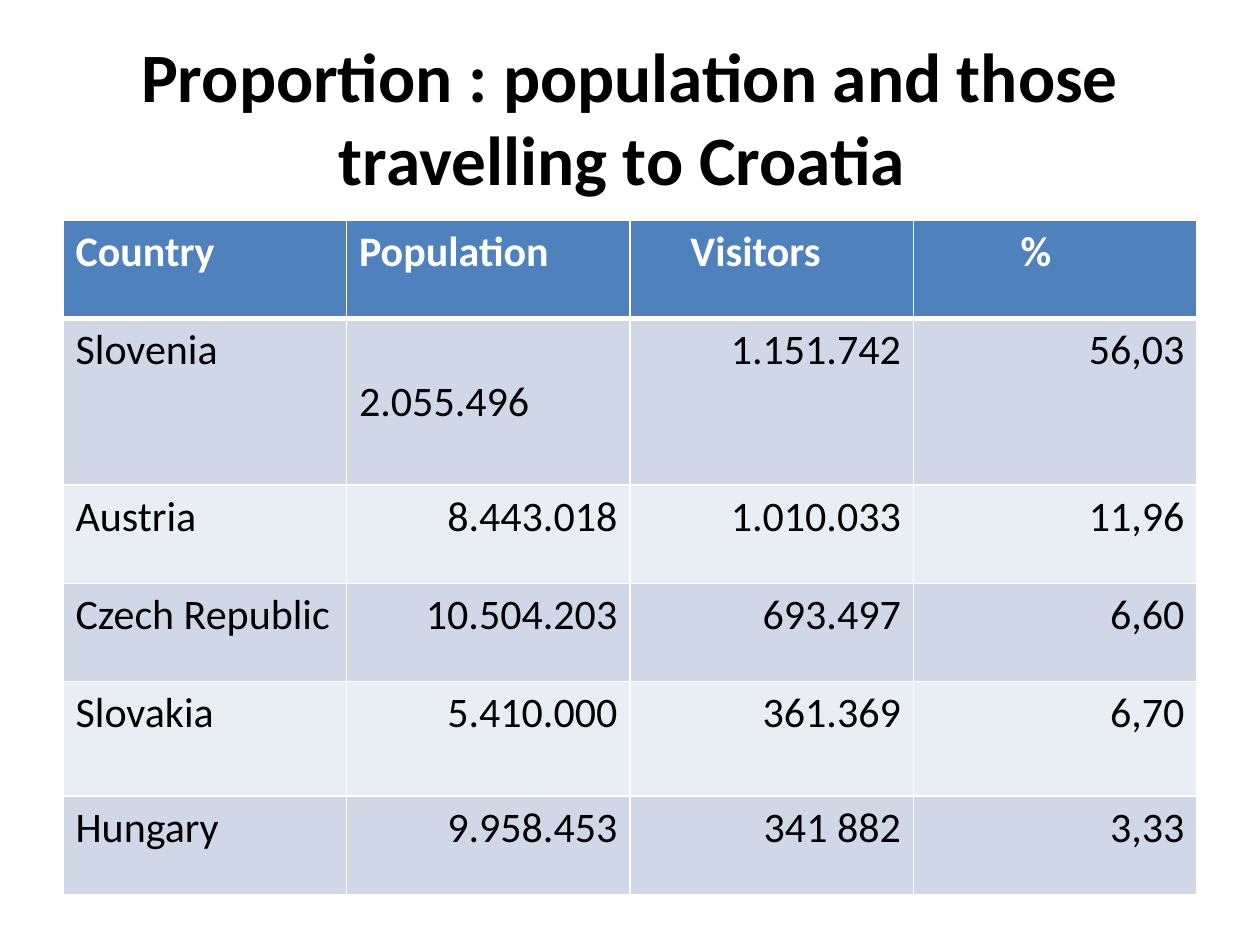
"""Build a slide comparing populations with visitors to Croatia."""
from lxml import etree
from pptx import Presentation
from pptx.dml.color import RGBColor
from pptx.enum.text import MSO_ANCHOR, MSO_AUTO_SIZE, PP_ALIGN
from pptx.oxml.ns import qn
from pptx.util import Inches, Pt

LEFT, CENTER, RIGHT = PP_ALIGN.LEFT, PP_ALIGN.CENTER, PP_ALIGN.RIGHT
MIDDLE = MSO_ANCHOR.MIDDLE
NO_FIT = MSO_AUTO_SIZE.NONE
WHITE = RGBColor(0xFF, 0xFF, 0xFF)
BLACK = RGBColor(0x00, 0x00, 0x00)
HEADER_BLUE = RGBColor(0x4F, 0x81, 0xBD)
BANDS = (RGBColor(0xE9, 0xED, 0xF4), RGBColor(0xD0, 0xD8, 0xE8))
FONT = "Calibri"

TITLE = "Proportion : population and those travelling to Croatia "
ROWS = [
    ("Country", "Population", "Visitors", "%"),
    ("Slovenia", "2.055.496", "1.151.742", "56,03"),
    ("Austria", "8.443.018", "1.010.033", "11,96"),
    ("Czech Republic", "10.504.203", "693.497", "6,60"),
    ("Slovakia", "5.410.000", "361.369", "6,70"),
    ("Hungary", "9.958.453", "341 882", "3,33"),
]
ROW_HEIGHTS = (0.78, 1.32, 0.78, 0.78, 0.91, 0.78)
COL_WIDTH = 2.25
HEADER_INDENTS = (0.1, 0.1, 0.48, 0.85)
LOWERED_CELL = (1, 1)


def add_text(tf, text, size, color, bold, align):
    p = tf.paragraphs[0]
    p.alignment = align
    r = p.add_run()
    r.text = text
    r.font.name = FONT
    r.font.size = Pt(size)
    r.font.bold = bold
    r.font.color.rgb = color


def set_borders(cell, widths):
    tc_pr = cell._tc.get_or_add_tcPr()
    for i, (side, width) in enumerate(widths.items()):
        ln = etree.Element(qn(f"a:ln{side}"), w=str(Pt(width)))
        fill = etree.SubElement(ln, qn("a:solidFill"))
        etree.SubElement(fill, qn("a:srgbClr"), val=str(WHITE))
        tc_pr.insert(i, ln)


def add_title(s):
    title = s.shapes.title
    title.left, title.top = Inches(0.5), Inches(0.3)
    title.width, title.height = Inches(9), Inches(1.25)
    tf = title.text_frame
    tf.word_wrap = True
    tf.auto_size = NO_FIT
    tf.vertical_anchor = MIDDLE
    add_text(tf, TITLE, 39.6, BLACK, True, CENTER)


def add_population_table(s):
    cols = len(ROWS[0])
    table = s.shapes.add_table(
        len(ROWS), cols, Inches(0.5), Inches(1.75),
        Inches(COL_WIDTH * cols), Inches(sum(ROW_HEIGHTS))).table
    for col in table.columns:
        col.width = Inches(COL_WIDTH)
    for i, (values, height) in enumerate(zip(ROWS, ROW_HEIGHTS)):
        table.rows[i].height = Inches(height)
        header = i == 0
        for j, text in enumerate(values):
            cell = table.cell(i, j)
            cell.fill.solid()
            cell.fill.fore_color.rgb = HEADER_BLUE if header else BANDS[i % 2]
            if header:
                cell.margin_left = Inches(HEADER_INDENTS[j])
            lowered = (i, j) == LOWERED_CELL
            if lowered:
                cell.margin_top = Inches(0.46)
            align = LEFT if header or j == 0 or lowered else RIGHT
            color = WHITE if header else BLACK
            add_text(cell.text_frame, text, 24, color, header, align)
            set_borders(cell, {"L": 1, "R": 1, "T": 3 if i == 1 else 1,
                               "B": 3 if header else 1})


def main():
    prs = Presentation()
    prs.slide_width, prs.slide_height = Inches(10), Inches(7.5)
    s = prs.slides.add_slide(prs.slide_layouts[5])
    add_title(s)
    add_population_table(s)
    prs.save("out.pptx")


if __name__ == "__main__":
    main()
